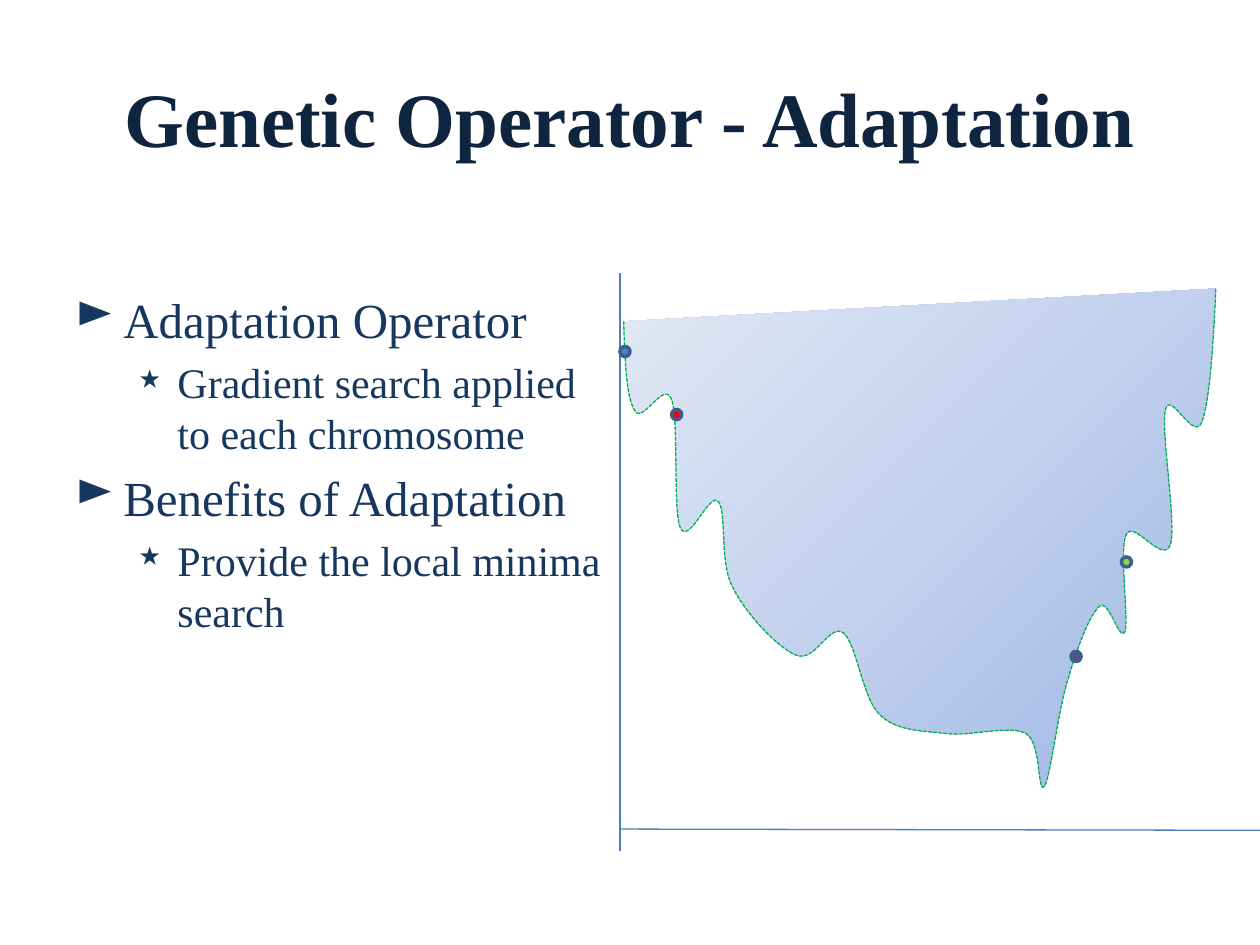
from copy import deepcopy
from dataclasses import dataclass
from lxml import etree
from pptx import Presentation
from pptx.dml.color import RGBColor
from pptx.enum.dml import MSO_LINE
from pptx.enum.shapes import MSO_CONNECTOR, MSO_SHAPE
from pptx.enum.text import MSO_ANCHOR, PP_ALIGN
from pptx.oxml import parse_xml
from pptx.oxml.ns import nsdecls, qn
from pptx.util import Inches, Pt


@dataclass(frozen=True)
class Theme:
    font: str = "Times New Roman"
    title: str = "0F243E"
    title_outline: str = "467AB8"
    body: str = "17375E"
    axis: str = "4B7EBC"
    curve: str = "00B050"
    dot_line: str = "3A5F8C"
    gradient: tuple = ((0, "9AB5E4"), (0.5, "C2D1ED"), (1, "E1E8F5"))
    title_size: int = 44
    level_sizes: tuple = (28, 24)


theme = Theme()


def rgb(value):
    return RGBColor.from_string(value)


def add_run(p, text, size, color):
    r = p.add_run()
    r.text = text
    r.font.name = theme.font
    r.font.size = Pt(size)
    r.font.color.rgb = rgb(color)
    return r


prs = Presentation()
prs.slide_width, prs.slide_height = Inches(10), Inches(7.5)
s = prs.slides.add_slide(prs.slide_layouts[6])

tf = s.shapes.add_textbox(Inches(0.5), Inches(0.3), Inches(9), Inches(1.25)).text_frame
tf.word_wrap = True
tf.vertical_anchor = MSO_ANCHOR.MIDDLE
p = tf.paragraphs[0]
p.alignment = PP_ALIGN.CENTER
r = add_run(p, "Genetic Operator - Adaptation", theme.title_size, theme.title)
r.font.bold = True
r.font._element.insert(0, parse_xml(
    f'<a:ln {nsdecls("a")} w="{Pt(0.83)}"><a:solidFill>'
    f'<a:srgbClr val="{theme.title_outline}"/></a:solidFill></a:ln>'))

bullets = [
    (0, "Adaptation Operator"),
    (1, "Gradient search applied to each chromosome"),
    (0, "Benefits of Adaptation"),
    (1, "Provide the local minima search"),
]
bullet_styles = [("►", 0.38, -0.38), ("٭", 0.81, -0.31)]
tf = s.shapes.add_textbox(Inches(0.5), Inches(2.25), Inches(4.42), Inches(4.58)).text_frame
tf.word_wrap = True
for i, (level, text) in enumerate(bullets):
    p = tf.paragraphs[0] if i == 0 else tf.add_paragraph()
    mark, margin, indent = bullet_styles[level]
    size = theme.level_sizes[level]
    p.level = level
    pPr = p._p.get_or_add_pPr()
    pPr.set("marL", str(Inches(margin)))
    pPr.set("indent", str(Inches(indent)))
    etree.SubElement(pPr, qn("a:buChar")).set("char", mark)
    if i:
        p.space_before = Pt(0.2 * size)
    add_run(p, text, size, theme.body)

curve_start = (4.95, 2.55)
curve_segments = [
    ((4.96, 2.85), (4.97, 3.16), (5.04, 3.26)),
    ((5.1, 3.37), (5.27, 3.01), (5.33, 3.17)),
    ((5.39, 3.32), (5.34, 4.06), (5.4, 4.19)),
    ((5.47, 4.33), (5.63, 3.9), (5.7, 3.98)),
    ((5.77, 4.05), (5.71, 4.45), (5.81, 4.65)),
    ((5.91, 4.86), (6.17, 5.14), (6.32, 5.2)),
    ((6.47, 5.26), (6.58, 4.95), (6.69, 5.02)),
    ((6.8, 5.1), (6.84, 5.53), (6.98, 5.67)),
    ((7.11, 5.8), (7.31, 5.8), (7.5, 5.82)),
    ((7.69, 5.85), (8.01, 5.75), (8.14, 5.82)),
    ((8.27, 5.89), (8.23, 6.31), (8.29, 6.24)),
    ((8.34, 6.16), (8.4, 5.62), (8.48, 5.38)),
    ((8.55, 5.14), (8.65, 4.87), (8.73, 4.81)),
    ((8.8, 4.75), (8.89, 5.11), (8.93, 5.01)),
    ((8.96, 4.92), (8.88, 4.35), (8.94, 4.24)),
    ((9, 4.12), (9.23, 4.49), (9.29, 4.32)),
    ((9.34, 4.16), (9.21, 3.41), (9.25, 3.25)),
    ((9.29, 3.09), (9.47, 3.51), (9.54, 3.35)),
    ((9.6, 3.18), (9.63, 2.74), (9.65, 2.29)),
]
builder = s.shapes.build_freeform(*map(Inches, curve_start))
builder.add_line_segments(
    [(Inches(x), Inches(y)) for segment in curve_segments for x, y in segment], close=False)
landscape = builder.convert_to_shape()
lines = list(landscape._element.iter(qn("a:lnTo")))
for i in range(0, len(lines), 3):
    bezier = etree.Element(qn("a:cubicBezTo"))
    lines[i].addprevious(bezier)
    for line in lines[i:i + 3]:
        bezier.append(line[0])
        line.getparent().remove(line)
landscape.shadow.inherit = False
landscape.fill.gradient()
landscape.fill.gradient_angle = 135
stop_list = landscape._element.spPr.find(".//" + qn("a:gsLst"))
stop_list.append(deepcopy(stop_list[0]))
for stop, (position, color) in zip(landscape.fill.gradient_stops, theme.gradient):
    stop.position = position
    stop.color.rgb = rgb(color)
landscape.line.color.rgb = rgb(theme.curve)
landscape.line.width = Pt(0.75)
landscape.line.dash_style = MSO_LINE.SQUARE_DOT

axes = [(4.92, 2.17, 4.92, 6.75), (4.92, 6.58, 10, 6.59)]
for ends in axes:
    axis = s.shapes.add_connector(MSO_CONNECTOR.STRAIGHT, *map(Inches, ends))
    axis.line.color.rgb = rgb(theme.axis)
    axis.line.width = Pt(0.75)
    etree.SubElement(axis._element.spPr, qn("a:effectLst"))

chromosomes = [
    (4.92, 2.75, "4F81BD"),
    (5.33, 3.25, "FF0000"),
    (8.9, 4.42, "92D050"),
    (8.5, 5.17, "604A7B"),
]
for x, y, color in chromosomes:
    dot = s.shapes.add_shape(
        MSO_SHAPE.OVAL, Inches(x), Inches(y), Inches(0.08), Inches(0.08))
    dot.shadow.inherit = False
    dot.fill.solid()
    dot.fill.fore_color.rgb = rgb(color)
    dot.line.color.rgb = rgb(theme.dot_line)
    dot.line.width = Pt(2)

prs.save("out.pptx")
